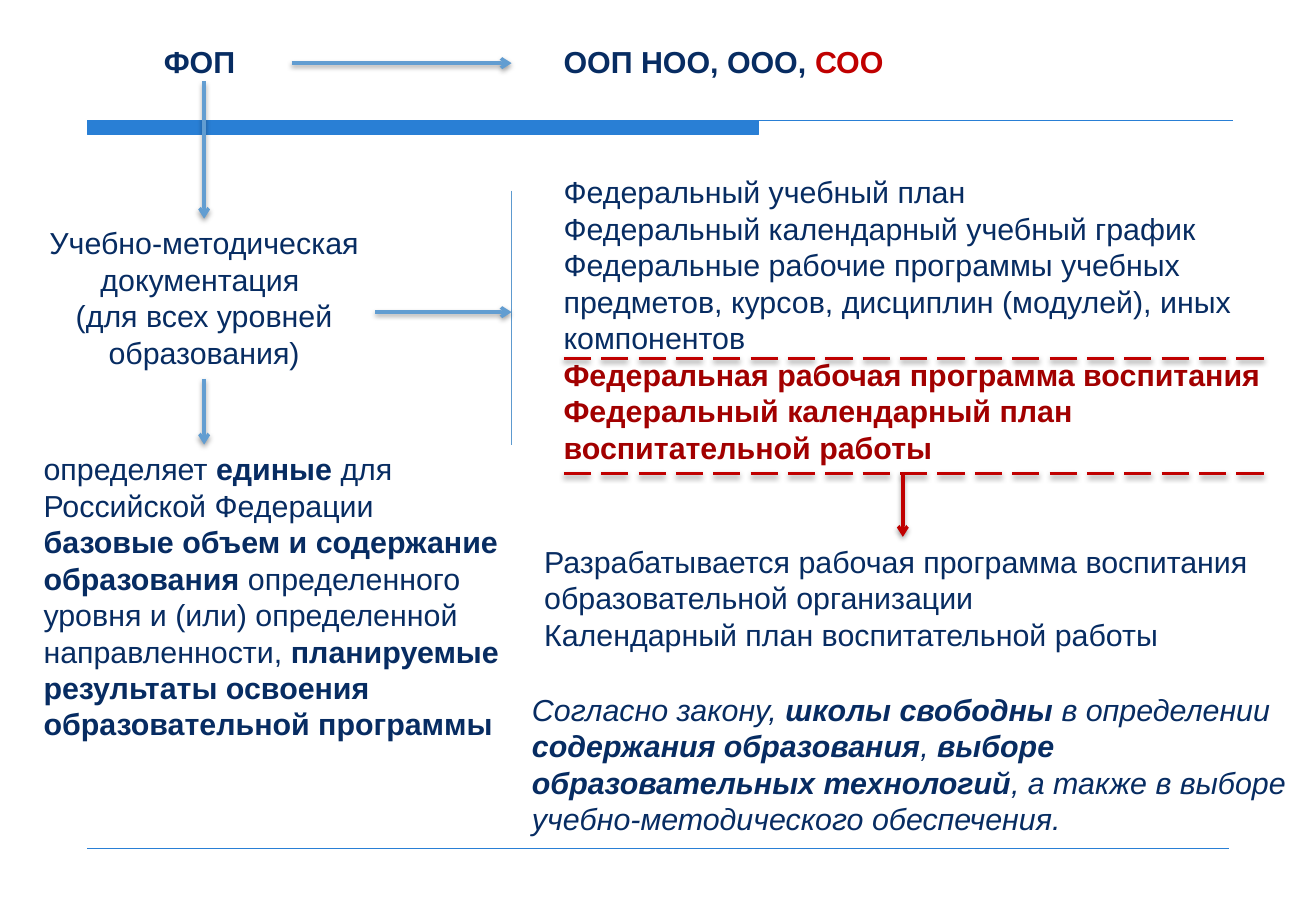
from lxml import etree
from pptx import Presentation
from pptx.dml.color import RGBColor
from pptx.enum import dml, shapes, text
from pptx.oxml import ns
from pptx.util import Inches, Pt

COLORS = {"navy": "072C62", "red": "C00000", "dark_red": "A20000", "bar": "297FD5",
          "arrow": "629DD1", "divider": "5D9ACF", "shadow": "000000"}
FONT, SIZE = "Arial", 18

# Text blocks: box (left, top, width, height), alignment, paragraphs of (text, style, color)
# Style letters: b = bold, i = italic
BLOCKS = {
    "documentation": ((0.26, 1.8, 2.84, 1.32), "CENTER", [
        [("Учебно-методическая документация ", "", "navy")],
        [("(для всех уровней образования)", "", "navy")]]),
    "program": ((1.25, 0.31, 2.28, 0.4), "LEFT", [[("ФОП", "b", "navy")]]),
    "levels": ((4.54, 0.31, 3.67, 0.4), "LEFT", [
        [("ООП НОО, ООО, ", "b", "navy"), ("СОО", "b", "red")]]),
    "components": ((4.54, 1.38, 5.94, 2.52), "LEFT", [
        [("Федеральный учебный план", "", "navy")],
        [("Федеральный календарный учебный график", "", "navy")],
        [("Федеральные рабочие программы учебных предметов, курсов, "
          "дисциплин (модулей), иных компонентов", "", "navy")],
        [("Федеральная рабочая программа воспитания", "b", "dark_red")],
        [("Федеральный календарный план воспитательной работы", "b", "dark_red")]]),
    "school_plan": ((4.38, 4.42, 6.1, 1.01), "LEFT", [
        [("Разрабатывается рабочая программа воспитания образовательной организации",
          "", "navy")],
        [("Календарный план воспитательной работы", "", "navy")]]),
    "definition": ((0.26, 3.66, 3.95, 2.83), "LEFT", [[
        ("определяет ", "", "navy"), ("единые", "b", "navy"),
        (" для Российской Федерации ", "", "navy"),
        ("базовые объем и содержание образования ", "b", "navy"),
        ("определенного уровня и (или) определенной направленности, ", "", "navy"),
        ("планируемые результаты освоения образовательной программы", "b", "navy")]]),
    "freedom": ((4.28, 5.64, 6.46, 1.31), "LEFT", [[
        ("Согласно закону, ", "i", "navy"), ("школы свободны ", "bi", "navy"),
        ("в определении ", "i", "navy"), ("содержания образования", "bi", "navy"),
        (", ", "i", "navy"), ("выборе образовательных технологий", "bi", "navy"),
        (", а также в выборе учебно-методического обеспечения.", "i", "navy")]]),
}

# Shared coordinates of the diagram
LEFT_AXIS, RIGHT_AXIS, DIVIDER_X = 1.68, 7.43, 4.21
FRAME_LEFT, FRAME_RIGHT, FRAME_TOP, FRAME_BOTTOM = 4.64, 10.48, 2.95, 3.9
BAR_LEFT, BAR_TOP, BAR_WIDTH, BAR_HEIGHT = 0.72, 0.99, 5.52, 0.12

# Lines: start, end, color, width in points
RULES = [
    ((BAR_LEFT, BAR_TOP), (10.15, BAR_TOP), "bar", 0.75),
    ((BAR_LEFT, 6.98), (10.11, 6.98), "bar", 0.25),
    ((DIVIDER_X, 1.57), (DIVIDER_X, 3.66), "divider", 0.75),
]
DASHES = [((FRAME_LEFT, y), (FRAME_RIGHT, y)) for y in (FRAME_TOP, FRAME_BOTTOM)]

# Arrows: start, end, color, joined block and side at the start, the same at the end
ARROWS = [
    ((2.4, 0.52), (DIVIDER_X, 0.52), "arrow", None, None),
    ((3.09, 2.57), (DIVIDER_X, 2.57), "arrow", None, None),
    ((LEFT_AXIS, 0.67), (LEFT_AXIS, 1.8), "arrow", None, ("documentation", 0)),
    ((LEFT_AXIS, 3.12), (LEFT_AXIS, 3.66), "arrow", ("documentation", 2), None),
    ((RIGHT_AXIS, FRAME_BOTTOM), (RIGHT_AXIS, 4.42), "red", None, ("school_plan", 0)),
]

deck = Presentation()
deck.slide_width, deck.slide_height = Inches(10.83), Inches(7.5)
slide = deck.slides.add_slide(deck.slide_layouts[6])


def rgb(name):
    return RGBColor.from_string(COLORS[name])


def add_line(start, end, color, width, shadow=False):
    line = slide.shapes.add_connector(
        shapes.MSO_CONNECTOR.STRAIGHT, *(Inches(v) for v in start + end))
    line.line.color.rgb = rgb(color)
    line.line.width = Pt(width)
    effects = etree.SubElement(line._element.spPr, ns.qn("a:effectLst"))
    if shadow:
        outer = etree.SubElement(effects, ns.qn("a:outerShdw"), blurRad=str(Pt(3.1)),
                                 dist=str(Pt(1.6)), dir="5400000", rotWithShape="0")
        tint = etree.SubElement(outer, ns.qn("a:srgbClr"), val=COLORS["shadow"])
        etree.SubElement(tint, ns.qn("a:alpha"), val="38000")
    return line


def add_block(box, align, paragraphs):
    block = slide.shapes.add_textbox(*(Inches(v) for v in box))
    frame = block.text_frame
    frame.word_wrap = True
    frame.auto_size = text.MSO_AUTO_SIZE.SHAPE_TO_FIT_TEXT
    for number, runs in enumerate(paragraphs):
        paragraph = frame.add_paragraph() if number else frame.paragraphs[0]
        paragraph.alignment = text.PP_ALIGN[align]
        for words, style, color in runs:
            run = paragraph.add_run()
            run.text = words
            run.font.name, run.font.size = FONT, Pt(SIZE)
            run.font.bold, run.font.italic = "b" in style, "i" in style
            run.font.color.rgb = rgb(color)
    return block


# Header bar and thin rules
bar = slide.shapes.add_shape(
    shapes.MSO_SHAPE.RECTANGLE,
    *(Inches(v) for v in (BAR_LEFT, BAR_TOP, BAR_WIDTH, BAR_HEIGHT)))
bar.shadow.inherit = False
bar.fill.solid()
bar.fill.fore_color.rgb = bar.line.color.rgb = rgb("bar")
bar.line.width = Pt(0.75)
for rule in RULES:
    add_line(*rule)

# Text
blocks = {name: add_block(*content) for name, content in BLOCKS.items()}

# Dashed frame around the upbringing programme
for start, end in DASHES:
    add_line(start, end, "red", 2, shadow=True).line.dash_style = dml.MSO_LINE.LONG_DASH

# Arrows
for start, end, color, begin_join, end_join in ARROWS:
    arrow = add_line(start, end, color, 2, shadow=True)
    etree.SubElement(arrow.line._get_or_add_ln(), ns.qn("a:tailEnd"), type="arrow")
    if begin_join:
        arrow.begin_connect(blocks[begin_join[0]], begin_join[1])
    if end_join:
        arrow.end_connect(blocks[end_join[0]], end_join[1])

deck.save("out.pptx")
